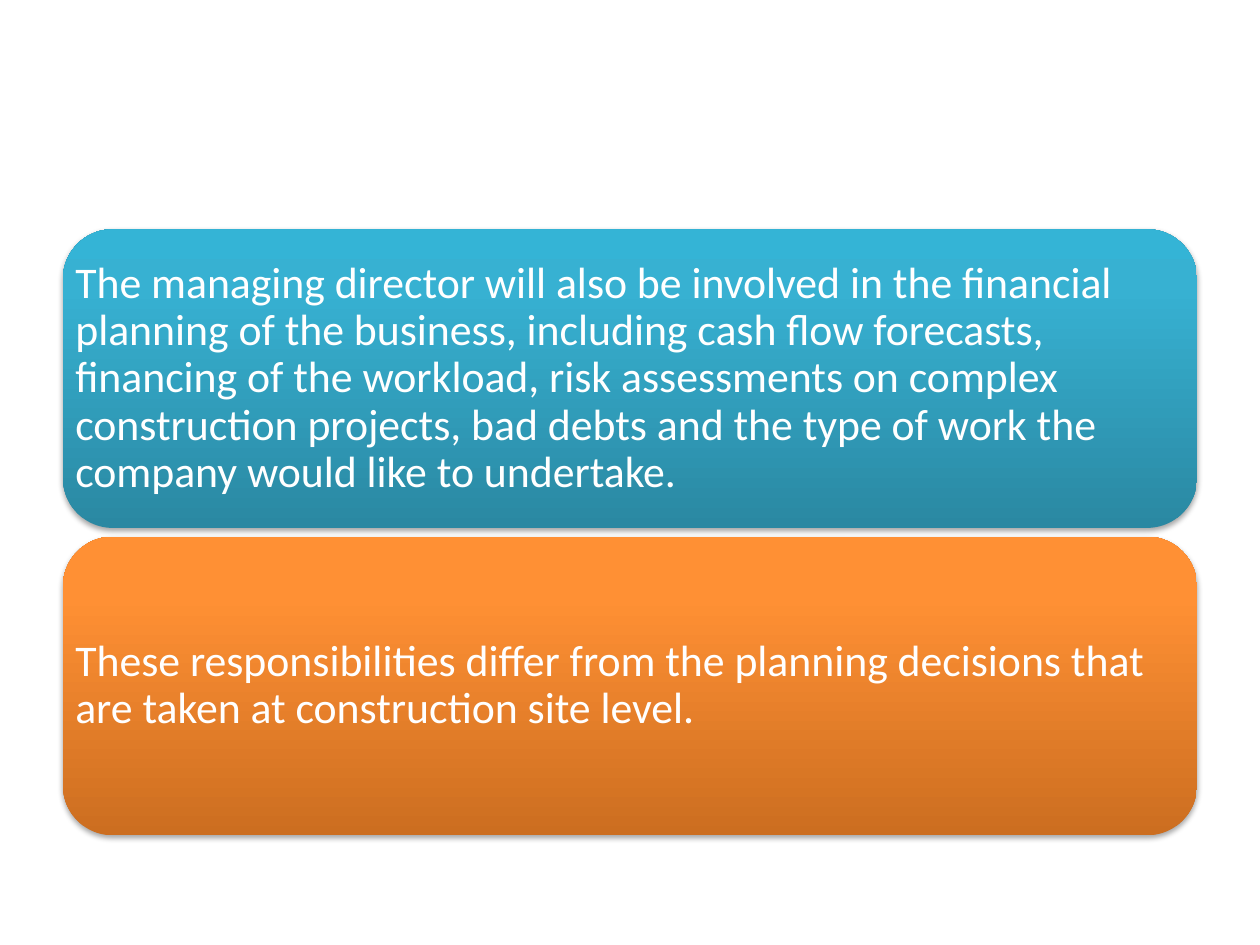
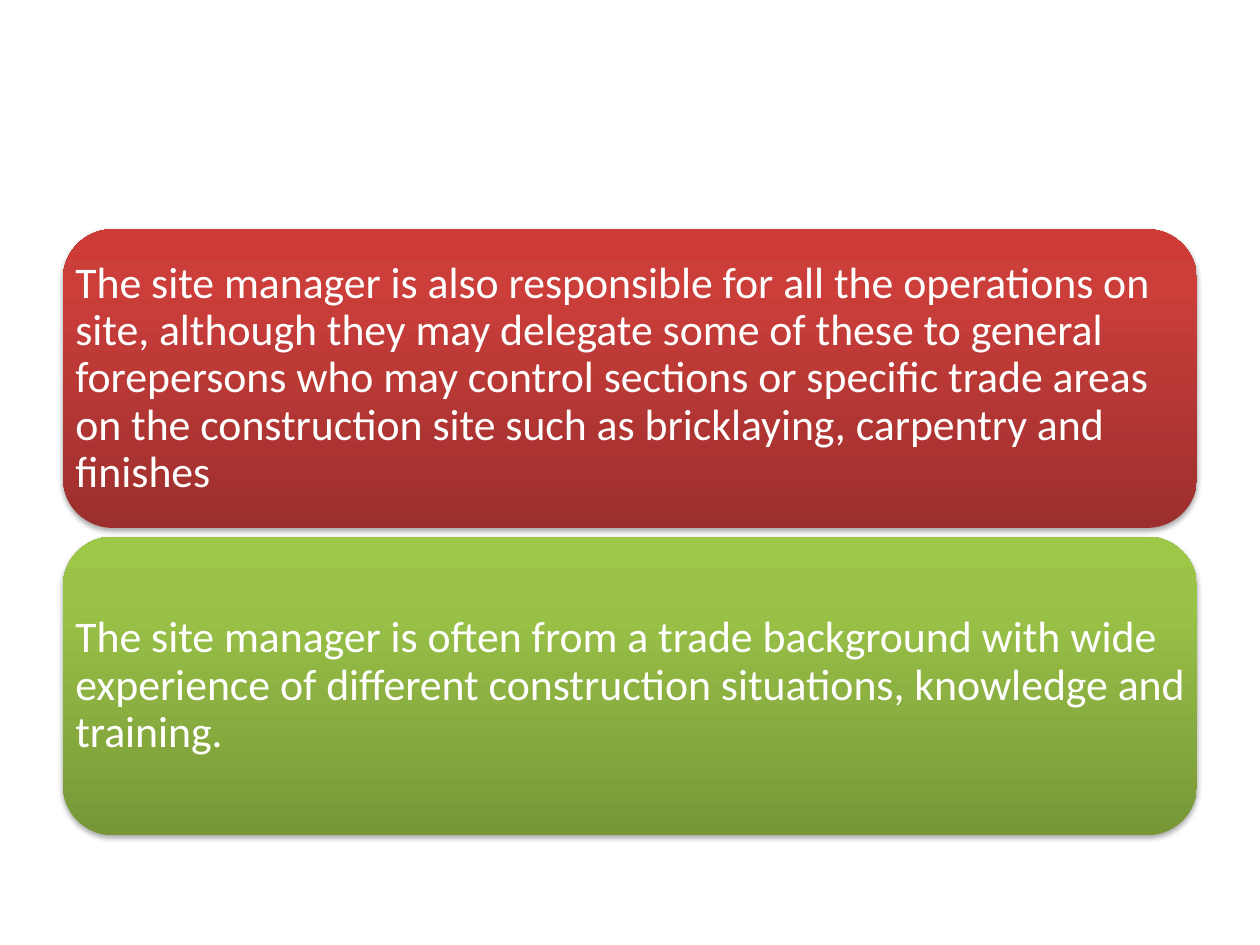
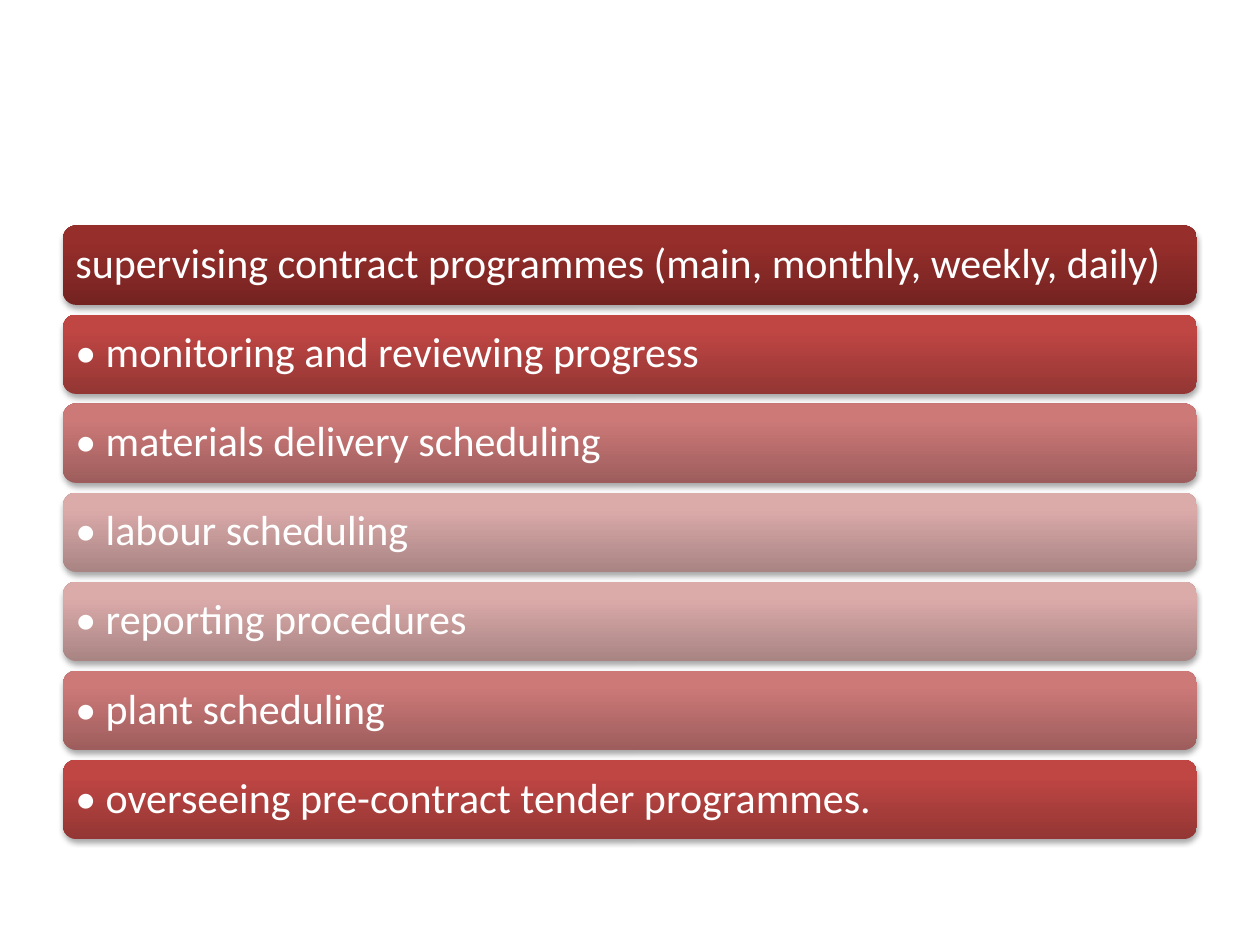
import copy
import dataclasses

import lxml.etree
import pptx
import pptx.dml.color
import pptx.enum.shapes
import pptx.enum.text
import pptx.oxml.ns
import pptx.shapes.autoshape
import pptx.shapes.group
import pptx.util

FONT = "Calibri"
LEFT = 0.5
WIDTH = 9
PADDING = pptx.util.Inches(0.1)
STOP_POSITIONS = (0, 0.8, 1)

COLORS = {"text": "FFFFFF", "shadow": "000000"}
GRADIENTS = {
    "teal": ("2A88A2", "37B1D2", "34B4D6"),
    "orange": ("CC6E20", "FF9034", "FF9136"),
    "red": ("9C2F2D", "CB3E3A", "CE3B37"),
    "green": ("779737", "9BC348", "9DC746"),
    "maroon": ("742321", "962E2B", "992C29"),
    "brick": ("933634", "BF4643", "C24441"),
    "rose": ("9D5D5C", "CC7978", "CE7877"),
    "blush": ("A88483", "DBABAA", "DDABAA"),
}


@dataclasses.dataclass(frozen=True)
class Panel:
    text: str
    gradient: str


@dataclasses.dataclass(frozen=True)
class Stack:
    first_top: float
    last_top: float
    height: float
    font_size: int
    panels: tuple[Panel, ...]


def statements(*panels: Panel) -> Stack:
    return Stack(1.82, 4.26, 2.37, 25, panels)


STACKS = (
    statements(
        Panel(
            "The managing director will also be involved in the financial planning "
            "of the business, including cash flow forecasts, financing of the workload, "
            "risk assessments on complex construction projects, bad debts and the type "
            "of work the company would like to undertake.",
            "teal",
        ),
        Panel(
            "These responsibilities differ from the planning decisions that are taken "
            "at construction site level.",
            "orange",
        ),
    ),
    statements(
        Panel(
            "The site manager is also responsible for all the operations on site, "
            "although they may delegate some of these to general forepersons who may "
            "control sections or specific trade areas on the construction site such as "
            "bricklaying, carpentry and finishes",
            "red",
        ),
        Panel(
            "The site manager is often from a trade background with wide experience of "
            "different construction situations, knowledge and training.",
            "green",
        ),
    ),
    Stack(1.79, 6.03, 0.63, 24, (
        Panel("supervising contract programmes (main, monthly, weekly, daily)", "maroon"),
        Panel("• monitoring and reviewing progress", "brick"),
        Panel("• materials delivery scheduling", "rose"),
        Panel("• labour scheduling", "blush"),
        Panel("• reporting procedures", "blush"),
        Panel("• plant scheduling", "rose"),
        Panel("• overseeing pre-contract tender programmes.", "brick"),
    )),
)


def add_element(
    parent: lxml.etree._Element, tag: str, **attributes: str
) -> lxml.etree._Element:
    return lxml.etree.SubElement(parent, pptx.oxml.ns.qn(tag), attributes)


def apply_gradient(shape: pptx.shapes.autoshape.Shape, gradient: str) -> None:
    shape.fill.gradient()
    shape.fill.gradient_angle = 90
    stop_list = shape.element.spPr.find(".//" + pptx.oxml.ns.qn("a:gsLst"))
    stop_list.insert(1, copy.deepcopy(stop_list[0]))
    for stop, position, color in zip(
        shape.fill.gradient_stops, STOP_POSITIONS, GRADIENTS[gradient]
    ):
        stop.position = position
        stop.color.rgb = pptx.dml.color.RGBColor.from_string(color)


def apply_shadow(shape: pptx.shapes.autoshape.Shape) -> None:
    shape.shadow.inherit = False
    effects = shape.element.spPr.find(pptx.oxml.ns.qn("a:effectLst"))
    shadow = add_element(
        effects, "a:outerShdw", blurRad="40000", dist="23000", dir="5400000", rotWithShape="0"
    )
    color = add_element(shadow, "a:srgbClr", val=COLORS["shadow"])
    add_element(color, "a:alpha", val="35000")


def add_text(
    group: pptx.shapes.group.GroupShape,
    text: str,
    *,
    top: float,
    height: float,
    size: int,
    color: str = "text",
) -> None:
    box = group.shapes.add_textbox(*map(pptx.util.Inches, (LEFT, top, WIDTH, height)))
    frame = box.text_frame
    frame.word_wrap = True
    frame.vertical_anchor = pptx.enum.text.MSO_ANCHOR.MIDDLE
    frame.margin_left = frame.margin_right = PADDING
    frame.margin_top = frame.margin_bottom = PADDING
    para = frame.paragraphs[0]
    para.alignment = pptx.enum.text.PP_ALIGN.LEFT
    para.line_spacing = 0.9
    span = para.add_run()
    span.text = text
    span.font.name = FONT
    span.font.size = pptx.util.Pt(size)
    span.font.color.rgb = pptx.dml.color.RGBColor.from_string(COLORS[color])
    spacing = add_element(para._p.get_or_add_pPr(), "a:spcAft")
    add_element(spacing, "a:spcPct", val="35000")


def add_panel(
    group: pptx.shapes.group.GroupShape, panel: Panel, top: float, stack: Stack
) -> None:
    shape = group.shapes.add_shape(
        pptx.enum.shapes.MSO_SHAPE.ROUNDED_RECTANGLE,
        *map(pptx.util.Inches, (LEFT, top, WIDTH, stack.height)),
    )
    apply_gradient(shape, panel.gradient)
    shape.line.fill.background()
    apply_shadow(shape)
    add_text(group, panel.text, top=top, height=stack.height, size=stack.font_size)


def main() -> None:
    deck = pptx.Presentation()
    deck.slide_width = pptx.util.Inches(10)
    deck.slide_height = pptx.util.Inches(7.5)
    for stack in STACKS:
        page = deck.slides.add_slide(deck.slide_layouts[6])
        group = page.shapes.add_group_shape()
        step = (stack.last_top - stack.first_top) / (len(stack.panels) - 1)
        for index, panel in enumerate(stack.panels):
            add_panel(group, panel, stack.first_top + index * step, stack)
    deck.save("out.pptx")


if __name__ == "__main__":
    main()
